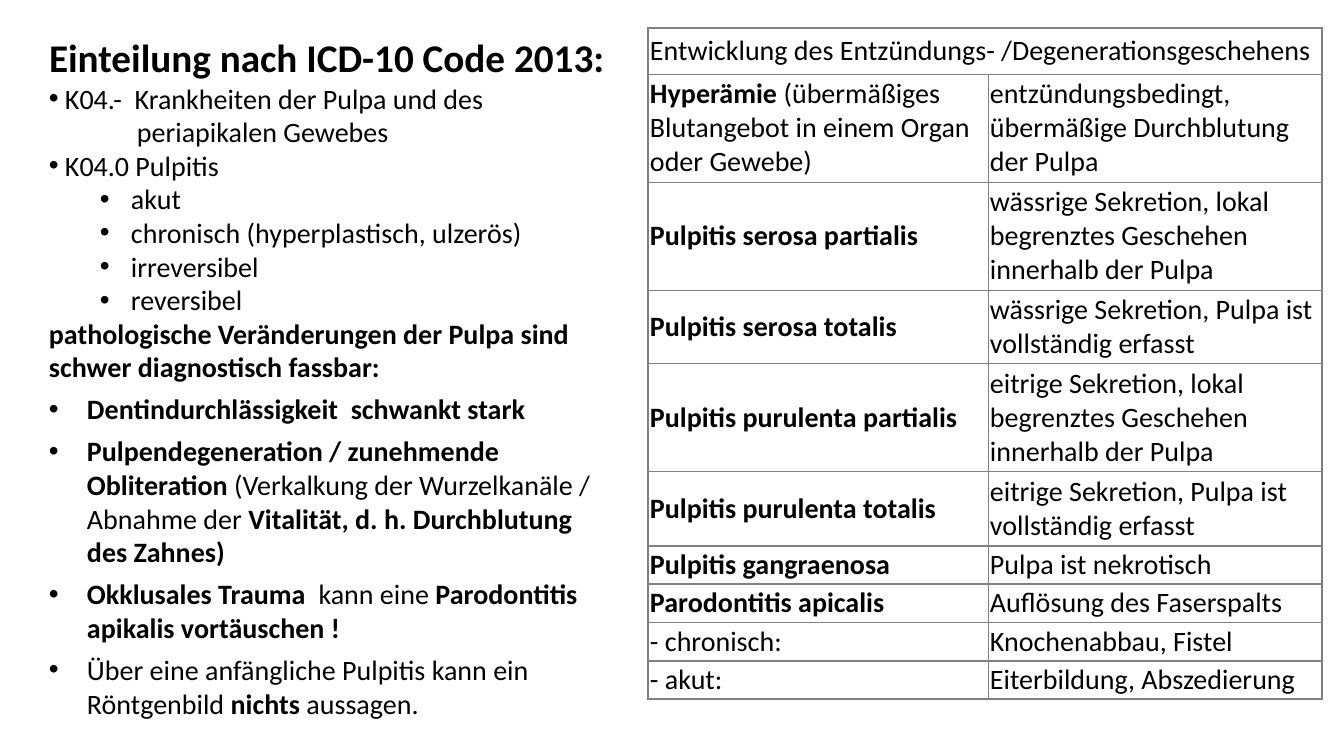
import pptx
import pptx.dml.color
import pptx.enum.text
import pptx.oxml
import pptx.oxml.ns
import pptx.util

HEADING = "Einteilung nach ICD-10 Code 2013:"

CODE = dict(bullet=True, left=16, hang=16)
FORM = dict(bullet=True, left=82, hang=31)
FINDING = dict(bullet=True, left=38, hang=38, after=6)
OUTLINE = [
    ("K04.-  Krankheiten der Pulpa und des", CODE),
    ("periapikalen Gewebes", dict(left=88)),
    ("K04.0 Pulpitis", CODE),
    ("akut", FORM),
    ("chronisch (hyperplastisch, ulzerös)", FORM),
    ("irreversibel", FORM),
    ("reversibel", FORM),
    ("**pathologische Veränderungen der Pulpa sind schwer diagnostisch fassbar:**", dict(after=6)),
    ("**Dentindurchlässigkeit  schwankt stark**", FINDING),
    ("**Pulpendegeneration / zunehmende Obliteration **(Verkalkung der Wurzelkanäle / "
     "Abnahme der **Vitalität, d. h. Durchblutung des Zahnes)**", FINDING),
    ("**Okklusales Trauma  **kann eine **Parodontitis apikalis vortäuschen !**", FINDING),
    ("Über eine anfängliche Pulpitis kann ein Röntgenbild **nichts** aussagen.", FINDING),
]

STAGES = [
    ("Entwicklung des Entzündungs- /Degenerationsgeschehens", ""),
    ("**Hyperämie** (übermäßiges Blutangebot in einem Organ oder Gewebe)",
     "entzündungsbedingt,\nübermäßige Durchblutung der Pulpa"),
    ("**Pulpitis serosa partialis**",
     "wässrige Sekretion, lokal begrenztes Geschehen innerhalb der Pulpa"),
    ("**Pulpitis serosa totalis**", "wässrige Sekretion, Pulpa ist vollständig erfasst"),
    ("**Pulpitis purulenta partialis**",
     "eitrige Sekretion, lokal begrenztes Geschehen innerhalb der Pulpa"),
    ("**Pulpitis purulenta totalis**", "eitrige Sekretion, Pulpa ist vollständig erfasst"),
    ("**Pulpitis gangraenosa**", "Pulpa ist nekrotisch"),
    ("**Parodontitis apicalis**", "Auflösung des Faserspalts"),
    ("- chronisch:", "Knochenabbau, Fistel"),
    ("- akut:", "Eiterbildung, Abszedierung"),
]
STAGE_COLUMNS = [340, 334]
STAGE_ROWS = [46, 108, 108, 74, 108, 74] + [38] * 4
FIRST_THICK_RULE = 6
THICK, THIN = 1.5, 0.75


def px(length):
    return round(length * 914400 / 100.8)


def colour(hex_string):
    return pptx.dml.color.RGBColor.from_string(hex_string)


def write(paragraph, text, size=20, font="Calibri", ink="000000",
          bullet=False, left=0, hang=0, after=0):
    """Fill a paragraph; text between ** marks is bold and a newline breaks the line."""
    paragraph.alignment = pptx.enum.text.PP_ALIGN.LEFT
    paragraph.space_before = pptx.util.Pt(0)
    paragraph.space_after = pptx.util.Pt(after)
    properties = paragraph._p.get_or_add_pPr()
    properties.set("marL", str(px(left)))
    properties.set("indent", str(px(-hang)))
    if bullet:
        face = pptx.oxml.ns.qn("a:buFont")
        mark = pptx.oxml.ns.qn("a:buChar")
        properties.append(properties.makeelement(face, {"typeface": "Arial"}))
        properties.append(properties.makeelement(mark, {"char": "•"}))
    for part_number, part in enumerate(text.split("**")):
        for line_number, line in enumerate(part.split("\n")):
            if line_number:
                paragraph.add_line_break()
            if line:
                run = paragraph.add_run()
                run.text = line
                run.font.size = pptx.util.Pt(size)
                run.font.name = font
                run.font.bold = part_number % 2 == 1
                run.font.color.rgb = colour(ink)


class SlideBuilder:
    """Holds the style and the current slide."""

    rule_colour = "808080"
    cell_inset = 2

    def __init__(self, deck):
        self.slide = deck.slides.add_slide(deck.slide_layouts[5])

    def prepare(self, frame):
        frame.word_wrap = True
        frame.auto_size = pptx.enum.text.MSO_AUTO_SIZE.NONE
        frame.vertical_anchor = pptx.enum.text.MSO_ANCHOR.TOP
        frame.margin_left = frame.margin_right = frame.margin_top = frame.margin_bottom = 0

    def title(self, text, left, top, width, height):
        heading = self.slide.shapes.title
        heading.left, heading.top = px(left), px(top)
        heading.width, heading.height = px(width), px(height)
        self.prepare(heading.text_frame)
        write(heading.text_frame.paragraphs[0], f"**{text}**", size=28)

    def outline(self, entries, left, top, width, height):
        box = self.slide.shapes.add_textbox(px(left), px(top), px(width), px(height))
        frame = box.text_frame
        self.prepare(frame)
        for number, (text, style) in enumerate(entries):
            write(frame.add_paragraph() if number else frame.paragraphs[0], text, **style)

    def borders(self, cell, **weights):
        properties = cell._tc.get_or_add_tcPr()
        for side in "LRTB":
            line = pptx.oxml.parse_xml(
                f'<a:ln{side} {pptx.oxml.ns.nsdecls("a")} w="{pptx.util.Pt(weights[side])}">'
                f'<a:solidFill><a:srgbClr val="{self.rule_colour}"/></a:solidFill></a:ln{side}>')
            properties.append(line)

    def table(self, rows, widths, heights, left, top):
        frame = self.slide.shapes.add_table(
            len(rows), len(widths), px(left), px(top), px(sum(widths)), px(sum(heights)))
        grid = frame.table
        grid.first_row = grid.horz_banding = False
        for column, width in zip(grid.columns, widths):
            column.width = px(width)
        for row, height in zip(grid.rows, heights):
            row.height = px(height)
        grid.cell(0, 0).merge(grid.cell(0, len(widths) - 1))
        rules = [THICK if number == 0 or number >= FIRST_THICK_RULE else THIN
                 for number in range(len(rows) + 1)]
        for row_number, texts in enumerate(rows):
            for column_number, text in enumerate(texts):
                cell = grid.cell(row_number, column_number)
                cell.margin_left = cell.margin_right = px(self.cell_inset)
                cell.margin_top = cell.margin_bottom = px(self.cell_inset)
                cell.vertical_anchor = pptx.enum.text.MSO_ANCHOR.MIDDLE
                last = column_number == len(widths) - 1 or row_number == 0
                self.borders(cell, L=THIN if column_number else THICK,
                             R=THICK if last else THIN,
                             T=rules[row_number], B=rules[row_number + 1])
                cell.fill.background()
                if text:
                    write(cell.text_frame.paragraphs[0], text)


def main():
    deck = pptx.Presentation()
    deck.slide_width, deck.slide_height = px(1344), px(756)
    builder = SlideBuilder(deck)
    builder.title(HEADING, 49, 33, 564, 48)
    builder.outline(OUTLINE, 49, 81, 564, 638)
    builder.table(STAGES, STAGE_COLUMNS, STAGE_ROWS, 648, 28)
    deck.save("out.pptx")


if __name__ == "__main__":
    main()
